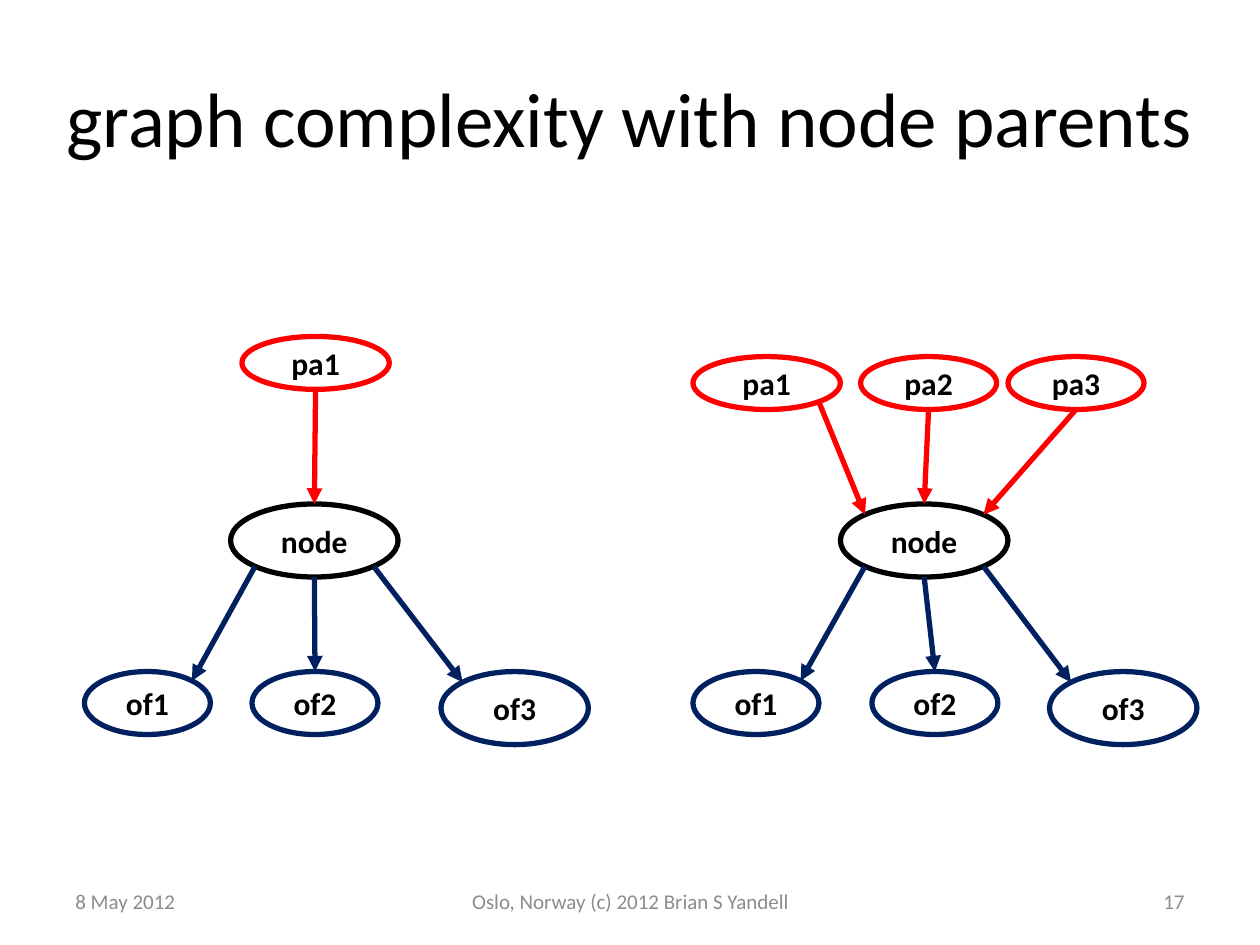
"""Build a slide with two directed graphs of a node, its parents and offspring."""
from math import sqrt

from lxml.etree import SubElement
from pptx import Presentation
from pptx.dml.color import RGBColor as RGB
from pptx.enum.shapes import MSO_CONNECTOR as LINK, MSO_SHAPE as SHAPE
from pptx.enum.text import MSO_ANCHOR as ANCHOR, PP_ALIGN as ALIGN
from pptx.oxml.ns import qn
from pptx.util import Inches, Pt

INK = {"text": "000000", "foot": "8C8C8C", "fill": "FFFFFF",
       "parent": "FF0000", "node": "000000", "child": "002060"}
FONT = "Calibri"


def color(name):
    return RGB.from_string(INK[name])


def write(shape, text, size, ink="text", align=ALIGN.CENTER, bold=False):
    frame = shape.text_frame
    frame.text = text
    frame.vertical_anchor = ANCHOR.MIDDLE
    para = frame.paragraphs[0]
    para.alignment = align
    font = para.font
    font.name, font.size, font.bold = FONT, Pt(size), bold
    font.color.rgb = color(ink)


def label(slide, box, text, size, ink, align=ALIGN.CENTER):
    shape = slide.shapes.add_textbox(*map(Inches, box))
    shape.text_frame.word_wrap = True
    write(shape, text, size, ink, align)


def oval(slide, box, text, kind):
    shape = slide.shapes.add_shape(SHAPE.OVAL, *map(Inches, box))
    shape.shadow.inherit = False
    shape.fill.solid()
    shape.fill.fore_color.rgb = color("fill")
    shape.line.color.rgb = color(kind)
    shape.line.width = Pt(3)
    shape.text_frame.word_wrap = False
    write(shape, text, 18, bold=True)


def rim(box, side, down):
    """Return the point on an oval's rim towards side (-1, 0, 1) and down (-1, 1)."""
    left, top, wide, high = box
    reach = 1 / sqrt(2) if side else 1
    return (left + wide / 2 * (1 + side * reach),
            top + high / 2 * (1 + down * reach))


def arrow(slide, start, end, kind):
    link = slide.shapes.add_connector(LINK.STRAIGHT, *map(Inches, start + end))
    link.line.color.rgb = color(kind)
    link.line.width = Pt(3)
    SubElement(link.line._get_or_add_ln(), qn("a:tailEnd"), type="triangle")
    SubElement(link._element.spPr, qn("a:effectLst"))


def graph(slide, left, parents, kids):
    """Draw a node with parents as (box, exit side, entry side) and three kids."""
    node = (left, 4, 1.33, 0.58)
    oval(slide, node, "node", "node")
    for num, (box, out, into) in enumerate(parents, 1):
        oval(slide, box, f"pa{num}", "parent")
        arrow(slide, rim(box, out, 1), rim(node, into, -1), "parent")
    for num, (box, side) in enumerate(zip(kids, (-1, 0, 1)), 1):
        oval(slide, box, f"of{num}", "child")
        arrow(slide, rim(node, side, 1), rim(box, -side, -1), "child")


def trio(*lefts):
    """Return the boxes of three offspring, the last one larger."""
    sizes = ((1, 0.5), (1, 0.5), (1.17, 0.58))
    return [(left, 5.33, *size) for left, size in zip(lefts, sizes)]


def main():
    deck = Presentation()
    deck.slide_width, deck.slide_height = Inches(10), Inches(7.5)
    slide = deck.slides.add_slide(deck.slide_layouts[6])
    label(slide, (0.25, 0.3, 9.5, 1.25),
          "graph complexity with node parents", 44, "text")
    graph(slide, 1.83, [((1.92, 2.67, 1.17, 0.42), 0, 0)], trio(0.67, 2, 3.5))
    graph(slide, 6.67, [((5.5, 2.83, 1.17, 0.42), 1, -1),
                        ((6.83, 2.83, 1.08, 0.42), 0, 0),
                        ((8, 2.83, 1.08, 0.42), 0, 1)], trio(5.5, 6.92, 8.33))
    for left, wide, text, align in (
            (0.5, 2.33, "8 May 2012", ALIGN.LEFT),
            (3.42, 3.17, "Oslo, Norway (c) 2012 Brian S Yandell", ALIGN.CENTER),
            (7.17, 2.33, "17", ALIGN.RIGHT)):
        label(slide, (left, 6.95, wide, 0.4), text, 12, "foot", align)
    deck.save("out.pptx")


if __name__ == "__main__":
    main()
